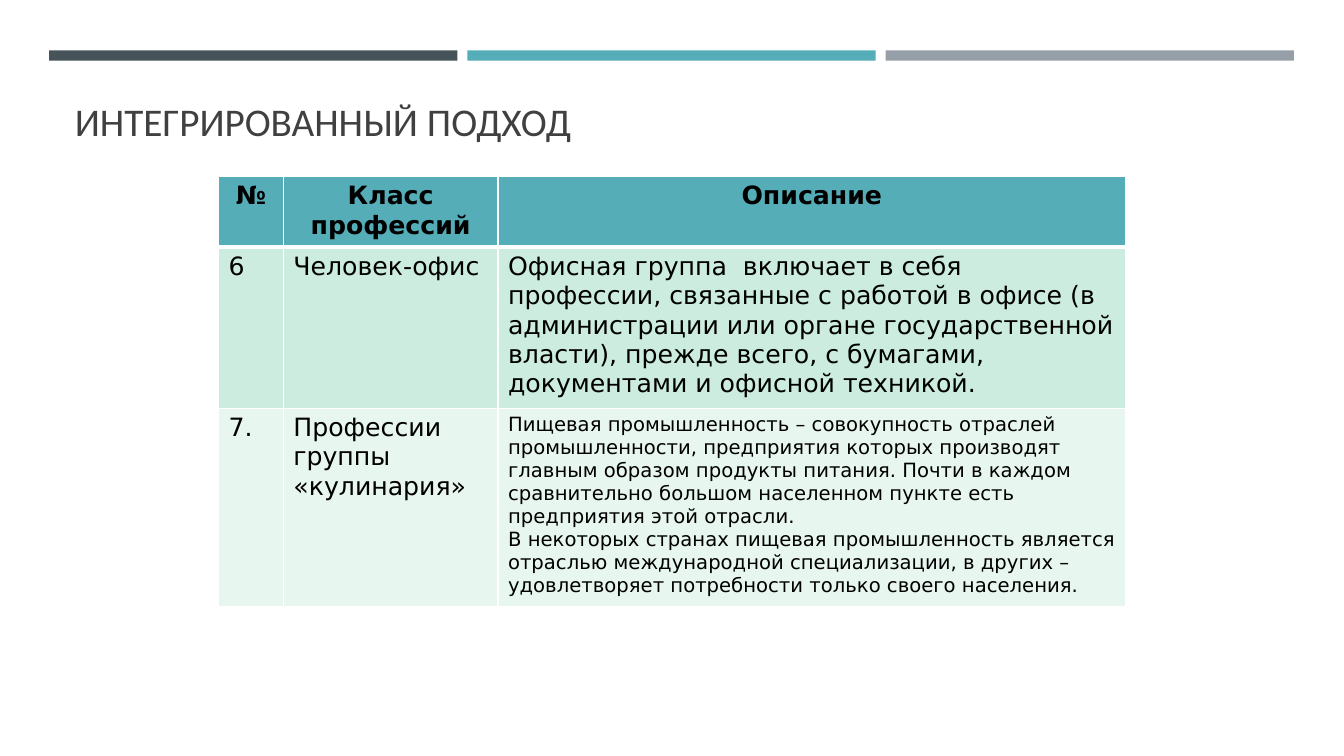
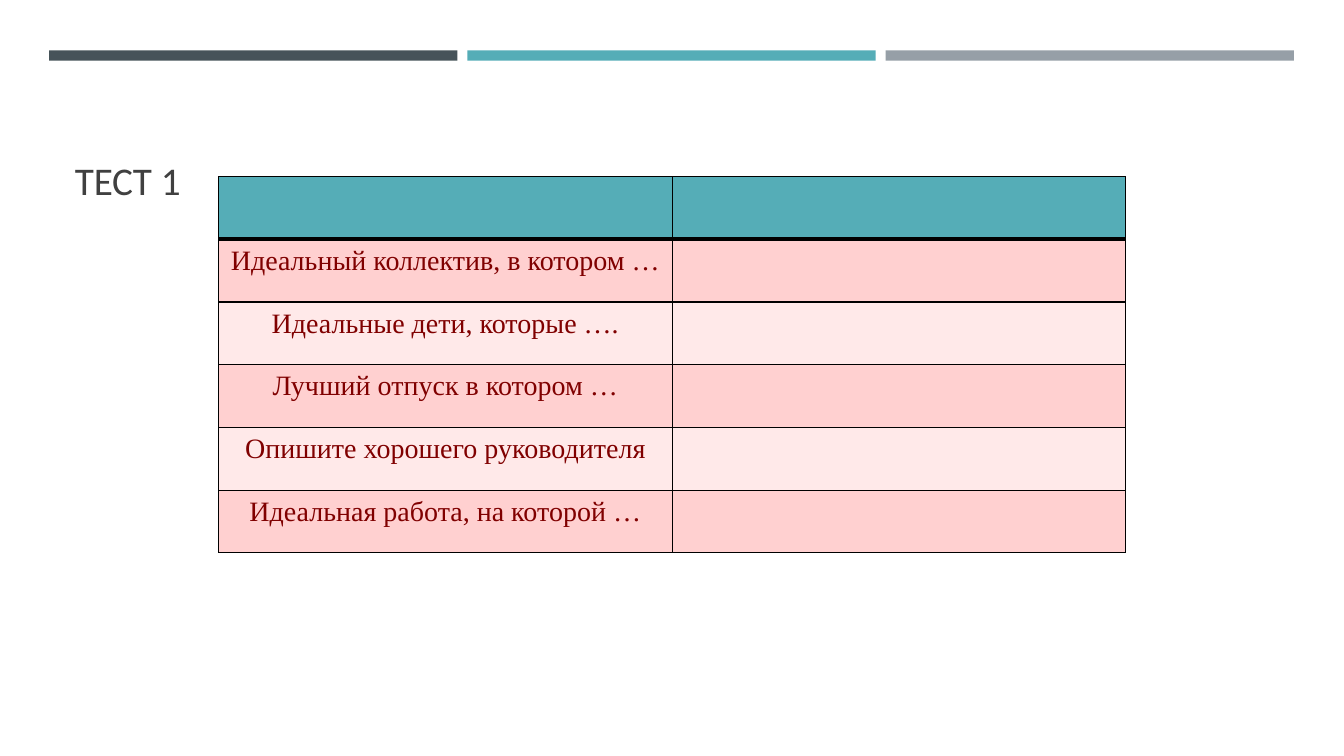
from lxml import etree
from pptx import Presentation
from pptx import util as u
from pptx.dml.color import RGBColor
from pptx.enum import shapes, text
from pptx.oxml import ns

BLACK, WHITE = "000000", "FFFFFF"
TEAL = "55ADB7"
BAND_COLORS = ["465359", TEAL, "969FA7"]
TITLE_STYLE = dict(font="Calibri", size=28, color="404040")
TABLE_LEFT, TABLE_TOP = 5.51, 4.45
THIN, THICK = 1, 3


def rgb(value):
    return RGBColor.from_string(value)


def write(frame, content, font, size, color, bold=False,
          align=text.PP_ALIGN.LEFT, line_spacing=None, space_before=None):
    """Fill a text frame; each line of content becomes one paragraph."""
    for index, line in enumerate(content.split("\n")):
        paragraph = frame.paragraphs[0] if index == 0 else frame.add_paragraph()
        paragraph.alignment = align
        if line_spacing is not None:
            paragraph.line_spacing = line_spacing
        if space_before is not None:
            paragraph.space_before = u.Pt(space_before)
        run = paragraph.add_run()
        run.text = line
        run.font.name = font
        run.font.size = u.Pt(size)
        run.font.bold = bold
        run.font.color.rgb = rgb(color)


def add_bands(slide, layout, left, top, width, gap=0.25, height=0.26):
    """Draw the three bands and hand them to the layout that slides share."""
    band_width = (width - 2 * gap) / 3
    for index, color in enumerate(BAND_COLORS):
        band = slide.shapes.add_shape(
            shapes.MSO_SHAPE.RECTANGLE,
            u.Cm(left + index * (band_width + gap)), u.Cm(top),
            u.Cm(band_width), u.Cm(height))
        band.shadow.inherit = False
        band.fill.solid()
        band.fill.fore_color.rgb = rgb(color)
        band.line.fill.background()
        layout.shapes.element.append(band.element)


def add_title(slide, content, height):
    title = slide.shapes.title
    title.left, title.top = u.Cm(1.63), u.Cm(1.96)
    title.width, title.height = u.Cm(30.63), u.Cm(height)
    frame = title.text_frame
    frame.auto_size = text.MSO_AUTO_SIZE.NONE
    frame.vertical_anchor = text.MSO_ANCHOR.BOTTOM
    write(frame, content, **TITLE_STYLE)


def set_borders(cell, color, top, bottom):
    properties = cell._tc.get_or_add_tcPr()
    widths = {"a:lnL": THIN, "a:lnR": THIN, "a:lnT": top, "a:lnB": bottom}
    for index, (tag, width) in enumerate(widths.items()):
        line = etree.Element(ns.qn(tag), w=str(u.Pt(width)))
        fill = etree.SubElement(line, ns.qn("a:solidFill"))
        etree.SubElement(fill, ns.qn("a:srgbClr"), val=color)
        properties.insert(index, line)


def add_table(slide, left, top, columns, rows, body_fills, border):
    """Add an empty table with a teal header row and banded body rows."""
    frame = slide.shapes.add_table(
        len(rows), len(columns), u.Cm(left), u.Cm(top),
        u.Cm(sum(columns)), u.Cm(sum(rows)))
    table = frame.table
    table.first_row = table.horz_banding = False
    for column, width in zip(table.columns, columns):
        column.width = u.Cm(width)
    for index, (row, height) in enumerate(zip(table.rows, rows)):
        row.height = u.Cm(height)
        color = TEAL if index == 0 else body_fills[(index - 1) % 2]
        for cell in row.cells:
            cell.fill.solid()
            cell.fill.fore_color.rgb = rgb(color)
            set_borders(cell, border,
                        top=THICK if index == 1 else THIN,
                        bottom=THICK if index == 0 else THIN)
    return table


def build_approach_slide(slide):
    add_title(slide, "ИНТЕГРИРОВАННЫЙ ПОДХОД", height=1.8)
    table = add_table(slide, TABLE_LEFT, TABLE_TOP, [1.63, 5.41, 15.82],
                      [1.78, 4.06, 5], ["CBECDE", "E7F6EF"], WHITE)
    header = ["№", "Класс профессий", "Описание"]
    professions = [
        ("6", "Человек-офис",
         "Офисная группа  включает в себя профессии, связанные с работой в "
         "офисе (в администрации или органе государственной власти), прежде "
         "всего, с бумагами, документами и офисной техникой.", 18),
        ("7.", "Профессии группы «кулинария»",
         "Пищевая промышленность – совокупность отраслей промышленности, "
         "предприятия которых производят главным образом продукты питания. "
         "Почти в каждом сравнительно большом населенном пункте есть "
         "предприятия этой отрасли.\n"
         "В некоторых странах пищевая промышленность является отраслью "
         "международной специализации, в других – удовлетворяет потребности "
         "только своего населения.", 14),
    ]
    style = dict(font="DejaVu Sans", color=BLACK)
    for column, label in enumerate(header):
        write(table.cell(0, column).text_frame, label, size=18, bold=True,
              align=text.PP_ALIGN.CENTER, **style)
    for row, (number, name, description, size) in enumerate(professions, 1):
        for column, (content, points) in enumerate(
                [(number, 18), (name, 18), (description, size)]):
            write(table.cell(row, column).text_frame, content, size=points, **style)


def build_test_slide(slide):
    add_title(slide, "ТЕСТ 1", height=3.3)
    prompts = [
        "Идеальный коллектив, в котором …",
        "Идеальные дети, которые ….",
        "Лучший отпуск в котором …",
        "Опишите хорошего руководителя",
        "Идеальная работа, на которой …",
    ]
    table = add_table(slide, TABLE_LEFT, TABLE_TOP, [11.43] * 2,
                      [1.58] * (len(prompts) + 1), ["FFD0D0", "FFE9E9"], BLACK)
    for row, prompt in enumerate(prompts, 1):
        cell = table.cell(row, 0)
        cell.margin_left = cell.margin_right = u.Cm(0.18)
        cell.margin_top = cell.margin_bottom = 0
        write(cell.text_frame, prompt, font="Times New Roman", size=20,
              color="800000", align=text.PP_ALIGN.CENTER,
              line_spacing=1.2, space_before=6)


def main():
    presentation = Presentation()
    presentation.slide_width = u.Cm(33.87)
    presentation.slide_height = u.Cm(19.05)
    layout = presentation.slide_layouts.get_by_name("Title Only")
    approach_slide = presentation.slides.add_slide(layout)
    add_bands(approach_slide, layout, left=1.24, top=1.27, width=31.37)
    build_approach_slide(approach_slide)
    build_test_slide(presentation.slides.add_slide(layout))
    presentation.save("out.pptx")


if __name__ == "__main__":
    main()
